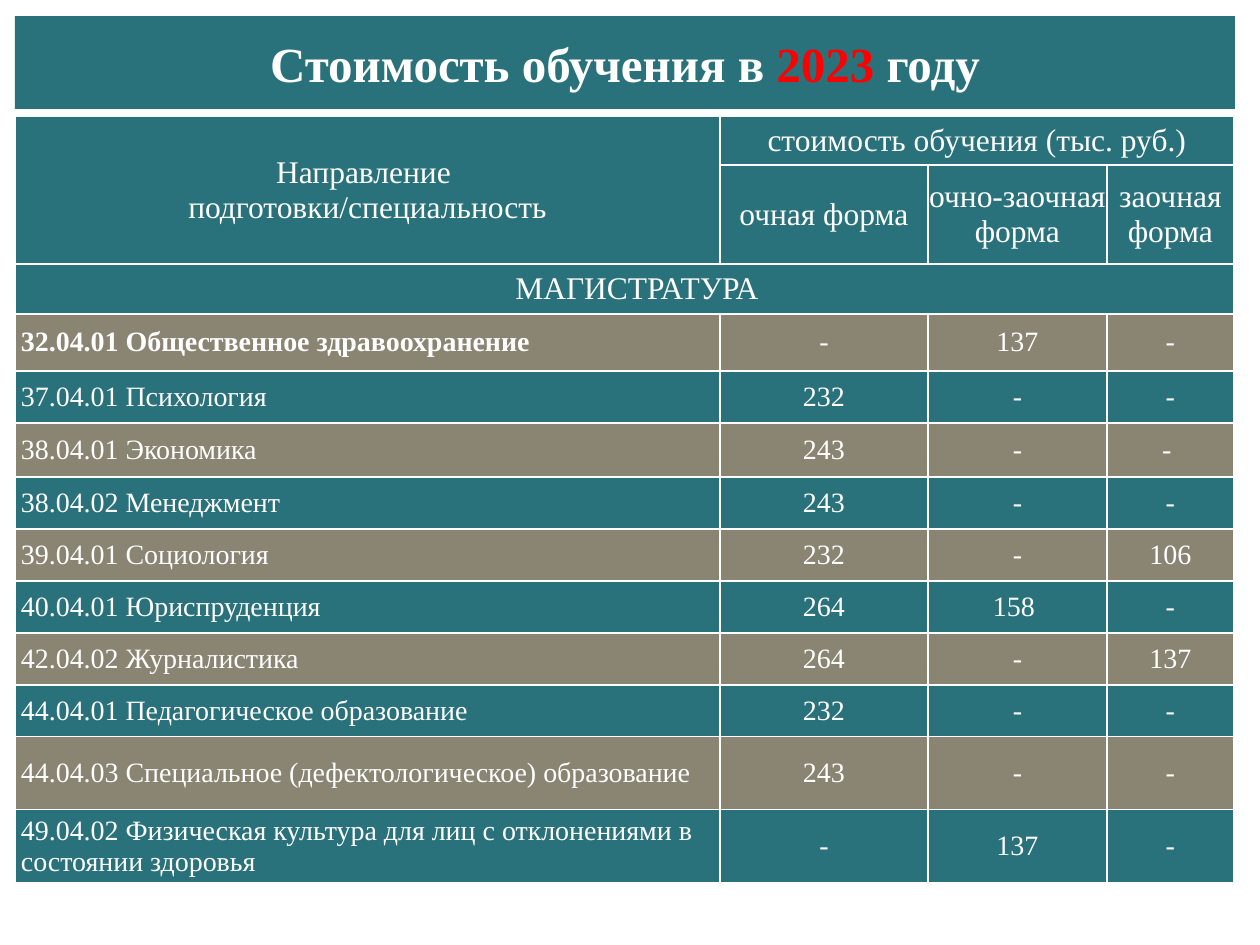
from dataclasses import dataclass

from lxml import etree
from pptx import Presentation, util as u
from pptx.dml.color import RGBColor
from pptx.enum import text
from pptx.oxml import ns

PX = u.Inches(1) // 126


def px(length: int) -> int:
    return length * PX


@dataclass(frozen=True)
class Theme:
    font: str = "Times New Roman"
    teal: str = "2A727B"
    taupe: str = "8A8472"
    white: str = "FFFFFF"
    red: str = "FF0000"
    title_size: int = 28
    head_size: int = 18
    body_size: int = 16


@dataclass(frozen=True)
class Programme:
    name: str
    full_time: str
    mixed: str
    distance: str
    height: int = 52
    bold: bool = False


@dataclass(frozen=True)
class CellStyle:
    size: int
    fill: str
    inset: int = 0
    indent: int = 0
    centred: bool = True
    bold: bool = False


THEME = Theme()
LEFT, WIDTH = 15, 1220
TITLE_TOP, TITLE_HEIGHT = 16, 93
TABLE_TOP = 116
COLUMNS = (705, 208, 179, 127)
HEAD_ROWS = (49, 99, 50)
PROGRAMMES = (
    Programme("32.04.01 Общественное здравоохранение", "-", "137", "-", 57, True),
    Programme("37.04.01 Психология", "232", "-", "-"),
    Programme("38.04.01 Экономика", "243", "-", "- ", 54),
    Programme("38.04.02 Менеджмент", "243", "-", "-"),
    Programme("39.04.01 Социология", "232", "-", "106"),
    Programme("40.04.01 Юриспруденция", "264", "158 ", "-"),
    Programme("42.04.02 Журналистика", "264", "-", "137"),
    Programme("44.04.01 Педагогическое образование", "232", "-", "-"),
    Programme("44.04.03 Специальное (дефектологическое) образование",
              "243", "-", "-", 73),
    Programme("49.04.02 Физическая культура для лиц с отклонениями в "
              "состоянии здоровья", "-", "137", "-", 73),
)


def format_run(span, size: int, colour: str, bold: bool) -> None:
    span.font.name = THEME.font
    span.font.size = u.Pt(size)
    span.font.bold = bold
    span.font.color.rgb = RGBColor.from_string(colour)


def add_borders(cell) -> None:
    properties = cell._tc.get_or_add_tcPr()
    for side in ("a:lnL", "a:lnR", "a:lnT", "a:lnB"):
        line = etree.SubElement(properties, ns.qn(side), w=str(u.Pt(1)))
        fill = etree.SubElement(line, ns.qn("a:solidFill"))
        etree.SubElement(fill, ns.qn("a:srgbClr"), val=THEME.white)


def write_cell(cell, words: str, style: CellStyle) -> None:
    cell.fill.solid()
    cell.fill.fore_color.rgb = RGBColor.from_string(style.fill)
    cell.vertical_anchor = text.MSO_ANCHOR.MIDDLE
    cell.margin_left = cell.margin_right = px(style.inset)
    cell.margin_top = cell.margin_bottom = 0
    cell.text_frame.text = words
    for para in cell.text_frame.paragraphs:
        para.alignment = text.PP_ALIGN.CENTER if style.centred else text.PP_ALIGN.LEFT
        if style.indent:
            para._p.get_or_add_pPr().set("marL", str(px(style.indent)))
        for span in para.runs:
            format_run(span, style.size, THEME.white, style.bold)


def add_title(page) -> None:
    box = page.shapes.title
    box.left, box.top = px(LEFT), px(TITLE_TOP)
    box.width, box.height = px(WIDTH), px(TITLE_HEIGHT)
    box.fill.solid()
    box.fill.fore_color.rgb = RGBColor.from_string(THEME.teal)
    box.text_frame.vertical_anchor = text.MSO_ANCHOR.MIDDLE
    para = box.text_frame.paragraphs[0]
    para.alignment = text.PP_ALIGN.CENTER
    for words, colour in (("Стоимость обучения в ", THEME.white),
                          ("2023", THEME.red), (" году", THEME.white)):
        span = para.add_run()
        span.text = words
        format_run(span, THEME.title_size, colour, True)


def add_fee_table(page) -> None:
    heights = HEAD_ROWS + tuple(item.height for item in PROGRAMMES)
    table = page.shapes.add_table(len(heights), len(COLUMNS), px(LEFT), px(TABLE_TOP),
                                  px(sum(COLUMNS)), px(sum(heights))).table
    for column, width in zip(table.columns, COLUMNS):
        column.width = px(width)
    for row, height in zip(table.rows, heights):
        row.height = px(height)
    for cell in table.iter_cells():
        add_borders(cell)

    # Column headings and the level of study
    head = CellStyle(THEME.head_size, THEME.teal)
    table.cell(0, 0).merge(table.cell(1, 0))
    table.cell(0, 1).merge(table.cell(0, 3))
    table.cell(2, 0).merge(table.cell(2, 3))
    write_cell(table.cell(0, 0), "Направление \nподготовки/специальность", head)
    write_cell(table.cell(0, 1), "стоимость обучения (тыс. руб.)", head)
    forms = ("очная форма", "очно-заочная форма", "заочная форма")
    for column, form in enumerate(forms, start=1):
        write_cell(table.cell(1, column), form, head)
    write_cell(table.cell(2, 0), "МАГИСТРАТУРА",
               CellStyle(THEME.head_size, THEME.teal, inset=7, indent=25))

    # Programmes in alternating colours
    for index, item in enumerate(PROGRAMMES):
        row = len(HEAD_ROWS) + index
        fill = THEME.teal if index % 2 else THEME.taupe
        write_cell(table.cell(row, 0), item.name,
                   CellStyle(THEME.body_size, fill, inset=6, centred=False, bold=item.bold))
        fees = (item.full_time, item.mixed, item.distance)
        for column, fee in enumerate(fees, start=1):
            write_cell(table.cell(row, column), fee, CellStyle(THEME.body_size, fill))


def main() -> None:
    deck = Presentation()
    deck.slide_width, deck.slide_height = u.Inches(10), u.Inches(7.5)
    page = deck.slides.add_slide(deck.slide_layouts[5])
    add_title(page)
    add_fee_table(page)
    deck.save("out.pptx")


if __name__ == "__main__":
    main()
